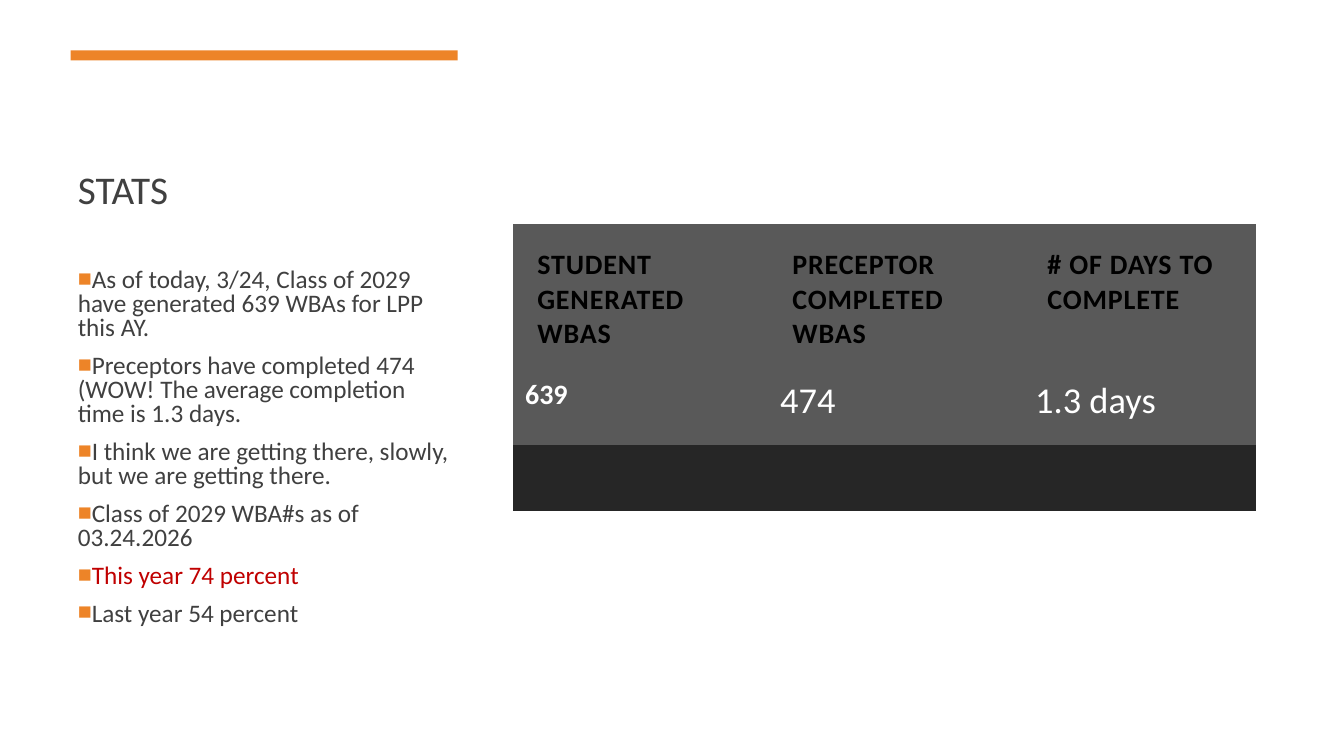
from lxml.etree import SubElement
from pptx import Presentation
from pptx.dml.color import RGBColor as Color
from pptx.enum.shapes import MSO_SHAPE as Preset
from pptx.enum.text import MSO_ANCHOR as Anchor, MSO_AUTO_SIZE as AutoSize, PP_ALIGN as Align
from pptx.oxml.ns import qn
from pptx.util import Pt

TITLE = "STATS"
POINTS = [
    ("As of today, 3/24, Class of 2029 have generated 639 WBAs for LPP this AY.", "text"),
    ("Preceptors have completed 474 (WOW! The average completion time is 1.3 days.", "text"),
    ("I think we are getting there, slowly, but we are getting there.", "text"),
    ("Class of 2029 WBA#s as of 03.24.2026", "text"),
    ("This year 74 percent", "alert"),
    ("Last year 54 percent", "text"),
]
HEADERS = ["STUDENT GENERATED WBAS", "PRECEPTOR COMPLETED WBAS", "# OF DAYS TO COMPLETE"]
VALUES = ["639", "474", "1.3 days"]

THEME = {
    "font": "Calibri",
    "colors": {"text": "404040", "alert": "C00000", "accent": "ED8428", "header": "000000",
               "value": "FFFFFF", "row": "595959", "footer": "262626"},
    "sizes": {"title": 28, "body": 18, "table": 20, "value": 26},
}
SLIDE_SIZE = (960, 540)
TITLE_BOX = (48.4, 55.4, 280.8, 100.1)
BODY_BOX = (48.4, 184.3, 280.8, 285.8)
ACCENT_BAR = (50.4, 36, 276.5, 7.2)
TABLE_BOX = (366.5, 160, 530.6, 205.2)
COLUMN_WIDTHS = (182.2, 182.2, 166.2)
ROW_HEIGHTS = (110.2, 47.5, 47.5)
HEADER_INSETS = (17.3, 17.3, 17.3, 17.3)
VALUE_INSETS = (8.6, 0, 8.6, 11.5)


def color(name):
    return Color.from_string(THEME["colors"][name])


def add_run(paragraph, text, size, tint, bold=False):
    run = paragraph.add_run()
    run.text = text
    run.font.name = THEME["font"]
    run.font.size = Pt(THEME["sizes"][size])
    run.font.color.rgb = color(tint)
    run.font.bold = bold
    return run


def place(shape, box, anchor):
    shape.left, shape.top, shape.width, shape.height = map(Pt, box)
    frame = shape.text_frame
    frame.word_wrap = True
    frame.auto_size = AutoSize.NONE
    frame.vertical_anchor = anchor
    return frame


def add_bullet(paragraph):
    properties = paragraph._p.get_or_add_pPr()
    properties.set("marL", "0")
    properties.set("indent", "0")
    tint = SubElement(properties, qn("a:buClr"))
    SubElement(tint, qn("a:srgbClr"), val=THEME["colors"]["accent"])
    SubElement(properties, qn("a:buSzPct"), val="92000")
    SubElement(properties, qn("a:buFont"), typeface="Arial")
    SubElement(properties, qn("a:buChar"), char="■")


def fill_title(slide):
    paragraph = place(slide.shapes.title, TITLE_BOX, Anchor.BOTTOM).paragraphs[0]
    paragraph.alignment = Align.LEFT
    add_run(paragraph, TITLE, "title", "text")


def fill_body(slide):
    frame = place(slide.placeholders[1], BODY_BOX, Anchor.MIDDLE)
    frame.margin_bottom = Pt(18)
    for index, (text, tint) in enumerate(POINTS):
        paragraph = frame.add_paragraph() if index else frame.paragraphs[0]
        add_bullet(paragraph)
        paragraph.alignment = Align.LEFT
        paragraph.line_spacing = 0.8
        paragraph.space_before = Pt(3.6 if index else 0)
        paragraph.space_after = Pt(6)
        add_run(paragraph, text, "body", tint)


def add_accent_bar(slide):
    bar = slide.shapes.add_shape(Preset.RECTANGLE, *map(Pt, ACCENT_BAR))
    bar.shadow.inherit = False
    bar.fill.solid()
    bar.fill.fore_color.rgb = color("accent")
    bar.line.fill.background()


def style_cell(cell, fill, insets):
    cell.fill.solid()
    cell.fill.fore_color.rgb = color(fill)
    cell.margin_left, cell.margin_top, cell.margin_right, cell.margin_bottom = map(Pt, insets)
    return cell.text_frame.paragraphs[0]


def add_stats_table(slide):
    table = slide.shapes.add_table(len(ROW_HEIGHTS), len(HEADERS), *map(Pt, TABLE_BOX)).table
    table.first_row = table.horz_banding = False
    style = table._tbl.tblPr.find(qn("a:tableStyleId"))
    style.text = "{2D5ABB26-0587-4C30-8999-92F81FD0307C}"
    for row, height in zip(table.rows, ROW_HEIGHTS):
        row.height = Pt(height)
    for index, (header, value) in enumerate(zip(HEADERS, VALUES)):
        table.columns[index].width = Pt(COLUMN_WIDTHS[index])
        paragraph = style_cell(table.cell(0, index), "row", HEADER_INSETS)
        run = add_run(paragraph, header, "table", "header", True)
        run._r.get_or_add_rPr().set("spc", "60")
        paragraph = style_cell(table.cell(1, index), "row", VALUE_INSETS)
        add_run(paragraph, value, "value" if index else "table", "value", index == 0)
        style_cell(table.cell(2, index), "footer", VALUE_INSETS)


def main():
    """Build the WBA statistics slide."""
    presentation = Presentation()
    presentation.slide_width, presentation.slide_height = map(Pt, SLIDE_SIZE)
    slide = presentation.slides.add_slide(presentation.slide_layouts[1])
    fill_title(slide)
    add_accent_bar(slide)
    fill_body(slide)
    add_stats_table(slide)
    presentation.save("out.pptx")


if __name__ == "__main__":
    main()
